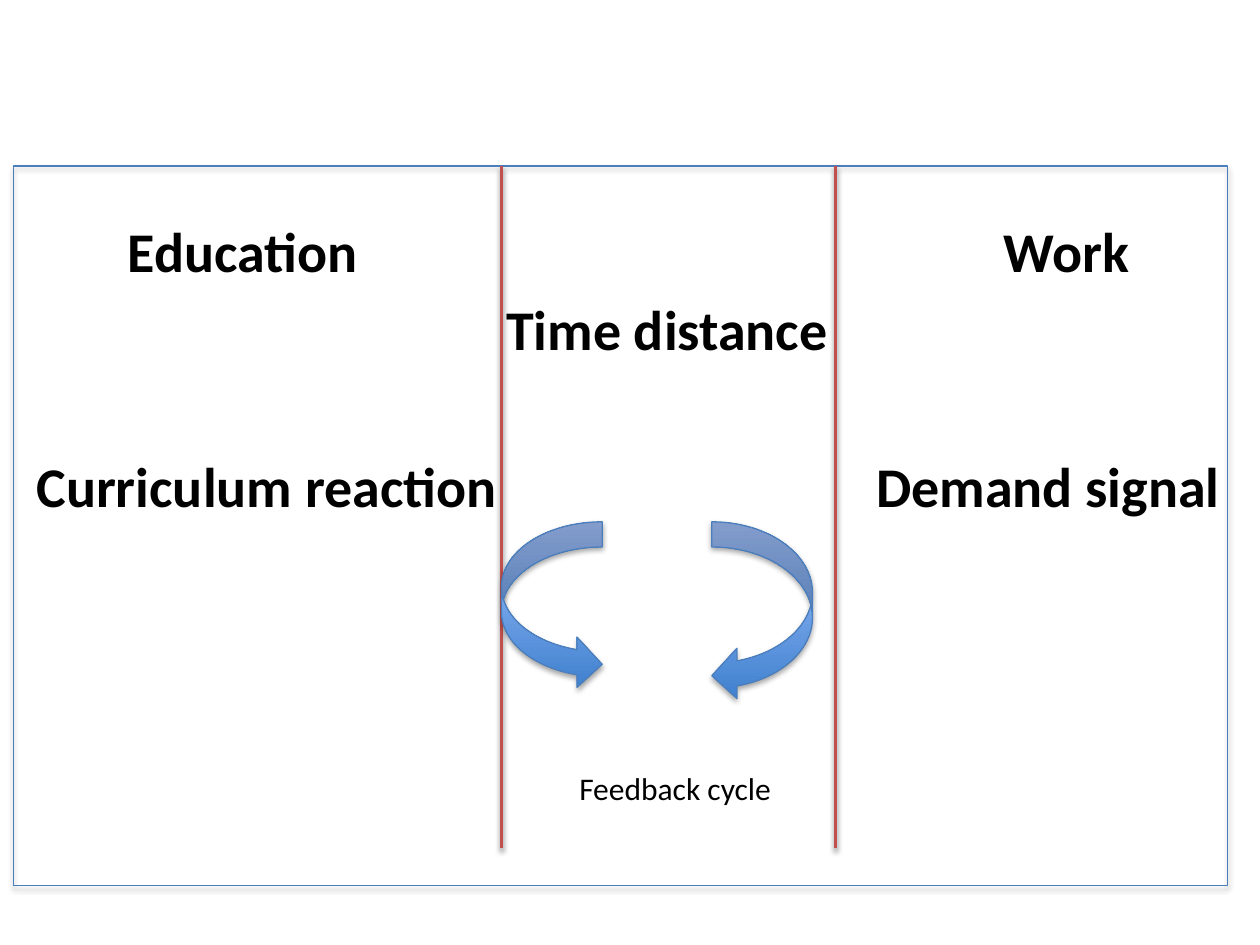
from lxml import etree
from pptx import Presentation
from pptx.dml.color import RGBColor
from pptx.enum.shapes import MSO_CONNECTOR as Link, MSO_SHAPE as Shape
from pptx.enum.text import MSO_ANCHOR as Anchor, PP_ALIGN as Align
from pptx.oxml import parse_xml
from pptx.oxml.ns import nsdecls
from pptx.util import Cm, Pt


def paint(color, code):
    color.rgb = RGBColor.from_string(code)


def shade(item, alpha):
    """Give an item a soft shadow below it; alpha is in percent."""
    props = item._element.spPr
    for old in props.findall("{*}effectLst"):
        props.remove(old)
    props.append(parse_xml(
        f'<a:effectLst {nsdecls("a")}>'
        '<a:outerShdw blurRad="40000" dist="23000" dir="5400000" rotWithShape="0">'
        f'<a:srgbClr val="000000"><a:alpha val="{alpha * 1000}"/></a:srgbClr>'
        '</a:outerShdw></a:effectLst>'))


class Board:
    font = "Calibri"
    ink = "000000"
    edge = "4B7EBC"
    rule = "C0504D"
    blend = ("3F80CE", "A4C4FF")

    def __init__(self, slide):
        self.items = slide.shapes

    def shape(self, kind, x, y, w, h):
        item = self.items.add_shape(kind, Cm(x), Cm(y), Cm(w), Cm(h))
        paint(item.line.color, self.edge)
        item.line.width = Pt(0.75)
        shade(item, 35)
        return item

    def frame(self, *box):
        self.shape(Shape.RECTANGLE, *box).fill.background()

    def arrow(self, kind, *box):
        fill = self.shape(kind, *box).fill
        fill.gradient()
        fill.gradient_angle = 90
        for stop, code in zip(fill.gradient_stops, self.blend):
            paint(stop.color, code)

    def divide(self, x, top, end):
        line = self.items.add_connector(
            Link.STRAIGHT, Cm(x), Cm(top), Cm(x), Cm(end))
        paint(line.line.color, self.rule)
        line.line.width = Pt(2)
        shade(line, 38)

    def label(self, text, x, y, w, size=32, bold=True):
        """Centre one line of text on the point x, y."""
        h = size * 0.05
        box = self.items.add_textbox(Cm(x - w / 2), Cm(y - h / 2), Cm(w), Cm(h))
        frame = box.text_frame
        frame.margin_left = frame.margin_right = 0
        frame.margin_top = frame.margin_bottom = 0
        frame.vertical_anchor = Anchor.MIDDLE
        frame.word_wrap = False
        frame.text = text
        para = frame.paragraphs[0]
        para.alignment = Align.CENTER
        font = para.runs[0].font
        font.name, font.size, font.bold = self.font, Pt(size), bold
        paint(font.color, self.ink)


def main():
    deck = Presentation()
    deck.slide_width, deck.slide_height = Cm(25.4), Cm(19.05)
    board = Board(deck.slides.add_slide(deck.slide_layouts[6]))

    top, left, right = 3.35, 10.11, 16.84
    first, pitch = 5.04, 1.58
    for text, x, row, w in (
        ("Education", 4.9, 0, 5),
        ("Work", 21.5, 0, 3),
        ("Time distance", 13.45, 1, 6.7),
        ("Curriculum reaction", 5.38, 3, 9.4),
        ("Demand signal", 21.13, 3, 7),
    ):
        board.label(text, x, first + row * pitch, w)

    board.frame(0.28, top, 24.46, 14.5)
    for x in (left, right):
        board.divide(x, top, 17.09)
    board.arrow(Shape.CURVED_RIGHT_ARROW, left, 10.52, 2.03, 3.38)
    board.arrow(Shape.CURVED_LEFT_ARROW, 14.35, 10.52, 2.03, 3.61)
    board.label("Feedback cycle", 13.61, 15.88, 4.1, size=18, bold=False)

    deck.save("out.pptx")


if __name__ == "__main__":
    main()
